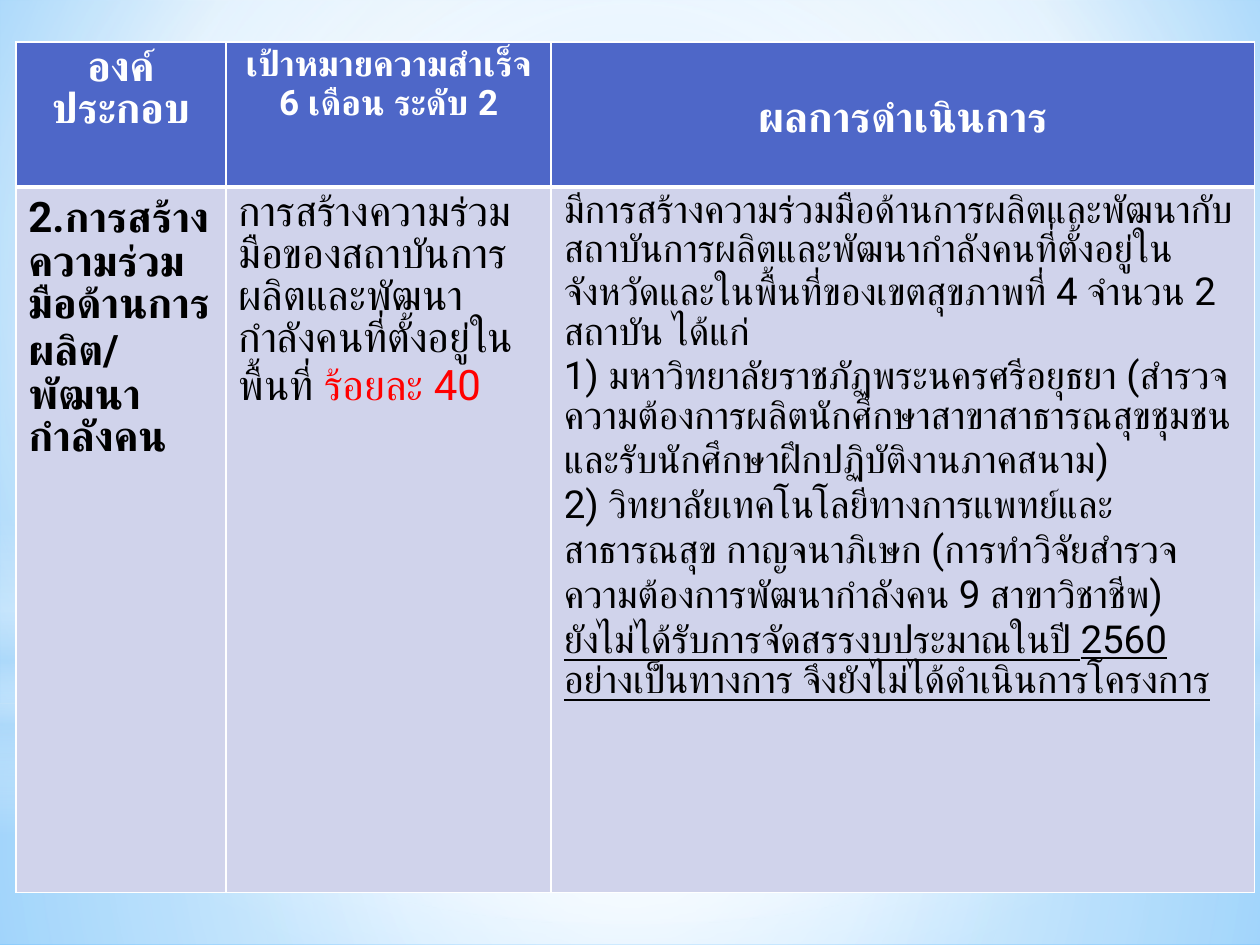
import dataclasses
import typing

import pptx
import pptx.dml.color
import pptx.enum.lang
import pptx.enum.shapes
import pptx.enum.text
import pptx.oxml
import pptx.oxml.ns
import pptx.util

Pt = pptx.util.Pt
RGB = pptx.dml.color.RGBColor
Shape = pptx.enum.shapes.MSO_SHAPE
Align = pptx.enum.text.PP_ALIGN
qn = pptx.oxml.ns.qn

WHITE = RGB(0xFF, 0xFF, 0xFF)
BLACK = RGB(0x00, 0x00, 0x00)
RED = RGB(0xFF, 0x00, 0x00)
INDIGO = RGB(0x4E, 0x67, 0xC8)
LILAC = RGB(0xD0, 0xD3, 0xEB)
SKY = RGB(0x9E, 0xD5, 0xFF)
AZURE = RGB(0x5B, 0xB9, 0xFF)
MIST = RGB(0xB4, 0xDC, 0xFA)

FONT = "Roboto"
WIDTH, HEIGHT = 720, 540
LEFT, TOP = 9, 24
COLS = (120.2, 185.8, 402)
ROWS = (82.8, 403.2)
CENTRE = (50, 50, 50, 50)


class Stop(typing.NamedTuple):
    pos: int
    color: RGB
    alpha: int = 100


@dataclasses.dataclass
class Glow:
    """A soft gradient band; without a focus it fades from top to bottom."""
    kind: Shape
    top: float
    height: float
    stops: list[Stop]
    focus: tuple | None = CENTRE


class Run(typing.NamedTuple):
    text: str
    size: int = 24
    color: RGB = BLACK
    bold: bool = False
    under: bool = False


@dataclasses.dataclass
class Cell:
    paras: list[list[Run]]
    fill: RGB = LILAC
    align: Align = Align.LEFT
    inset: float = 3.6
    base: float = 1


def head(*lines: str, size: int = 24, inset: float = 3.6) -> Cell:
    paras = [[Run(line, size, WHITE, True)] for line in lines]
    return Cell(paras, INDIGO, Align.CENTER, inset, 3)


GLOWS = [
    Glow(Shape.RECTANGLE, 402, 138,
         [Stop(0, WHITE, 91), Stop(37, WHITE, 76), Stop(100, MIST, 79)]),
    Glow(Shape.RECTANGLE, 0, 402,
         [Stop(0, WHITE, 89), Stop(48, WHITE, 62), Stop(100, MIST, 79)]),
    Glow(Shape.RECTANGLE, 296.6, 180,
         [Stop(0, WHITE, 0), Stop(29, WHITE, 30), Stop(45, MIST, 40),
          Stop(55, WHITE, 26), Stop(65, MIST, 60), Stop(100, WHITE, 0)], None),
    Glow(Shape.OVAL, 126, 402, [Stop(0, WHITE), Stop(56, WHITE, 0)]),
]

RESULTS = [
    Run("มีการสร้างความร่วมมือด้านการผลิตและพัฒนากับสถาบันการผลิตและพัฒนา"
        "กำลังคนที่ตั้งอยู่ในจังหวัดและในพื้นที่ของเขตสุขภาพที่ 4 จำนวน 2 "
        "สถาบัน ได้แก่", 22),
    Run("1) มหาวิทยาลัยราชภัฏพระนครศรีอยุธยา (สำรวจความต้องการผลิตนักศึกษา"
        "สาขาสาธารณสุขชุมชนและรับนักศึกษาฝึกปฏิบัติงานภาคสนาม)", 22),
    Run("2) วิทยาลัยเทคโนโลยีทางการแพทย์และสาธารณสุข กาญจนาภิเษก "
        "(การทำวิจัยสำรวจความต้องการพัฒนากำลังคน 9 สาขาวิชาชีพ)", 22),
    Run("ยังไม่ได้รับการจัดสรรงบประมาณในปี 2560 อย่างเป็นทางการ "
        "จึงยังไม่ได้ดำเนินการโครงการ", 22, under=True),
]

GRID = [
    [head("องค์", "ประกอบ"),
     head("เป้าหมายความสำเร็จ", "6 เดือน ระดับ 2", size=20),
     head("ผลการดำเนินการ", inset=32.8)],
    [Cell([[Run("2.การสร้างความร่วมมือด้านการผลิต/พัฒนากำลังคน", bold=True)]]),
     Cell([[Run("การสร้างความร่วมมือของสถาบันการผลิตและพัฒนากำลังคน"
                "ที่ตั้งอยู่ในพื้นที่ "),
            Run("ร้อยละ 40", color=RED)]]),
     Cell([[run] for run in RESULTS])],
]


def set_blend(owner, stops: list[Stop], focus: tuple | None) -> None:
    """Swap the solid fill inside owner for a gradient."""
    marks = "".join(
        f'<a:gs pos="{s.pos * 1000}"><a:srgbClr val="{s.color}">'
        f'<a:alpha val="{s.alpha * 1000}"/></a:srgbClr></a:gs>' for s in stops)
    if focus:
        sides = " ".join(f'{side}="{part * 1000}"'
                         for side, part in zip("ltrb", focus))
        way = f'<a:path path="circle"><a:fillToRect {sides}/></a:path>'
    else:
        way = '<a:lin ang="5400000" scaled="0"/>'
    blend = pptx.oxml.parse_xml(
        f'<a:gradFill {pptx.oxml.ns.nsdecls("a")} rotWithShape="1">'
        f'<a:gsLst>{marks}</a:gsLst>{way}</a:gradFill>')
    solid = next(owner.iter(qn("a:solidFill")))
    solid.getparent().replace(solid, blend)


def draw_glow(slide, glow: Glow) -> None:
    shape = slide.shapes.add_shape(
        glow.kind, 0, Pt(glow.top), Pt(WIDTH), Pt(glow.height))
    shape.shadow.inherit = False
    shape.line.fill.background()
    shape.fill.solid()
    set_blend(shape._element.spPr, glow.stops, glow.focus)


def draw_run(para, spec: Run) -> None:
    run = para.add_run()
    run.text = spec.text
    style = {"name": FONT, "size": Pt(spec.size), "bold": spec.bold,
             "underline": spec.under,
             "language_id": pptx.enum.lang.MSO_LANGUAGE_ID.THAI}
    for key, value in style.items():
        setattr(run.font, key, value)
    run.font.color.rgb = spec.color


def set_edges(cell, base: float) -> None:
    for spot, side in enumerate("LRTB"):
        width = Pt(base if side == "B" else 1)
        edge = pptx.oxml.parse_xml(
            f'<a:ln{side} {pptx.oxml.ns.nsdecls("a")} w="{width}"><a:solidFill>'
            f'<a:srgbClr val="{WHITE}"/></a:solidFill></a:ln{side}>')
        cell._tc.get_or_add_tcPr().insert(spot, edge)


def draw_cell(cell, spec: Cell) -> None:
    cell.fill.solid()
    cell.fill.fore_color.rgb = spec.fill
    cell.margin_top = Pt(spec.inset)
    set_edges(cell, spec.base)
    frame = cell.text_frame
    for spot, runs in enumerate(spec.paras):
        para = frame.add_paragraph() if spot else frame.paragraphs[0]
        para.alignment = spec.align
        for run in runs:
            draw_run(para, run)


def draw_table(slide) -> None:
    table = slide.shapes.add_table(
        len(ROWS), len(COLS), Pt(LEFT), Pt(TOP),
        Pt(sum(COLS)), Pt(sum(ROWS))).table
    table.horz_banding = False
    for col, width in zip(table.columns, COLS):
        col.width = Pt(width)
    for row, height, specs in zip(table.rows, ROWS, GRID):
        row.height = Pt(height)
        for cell, spec in zip(row.cells, specs):
            draw_cell(cell, spec)


def main() -> None:
    deck = pptx.Presentation()
    deck.slide_width, deck.slide_height = Pt(WIDTH), Pt(HEIGHT)
    slide = deck.slides.add_slide(deck.slide_layouts[6])
    slide.background.fill.solid()
    set_blend(slide._element.cSld.bg,
              [Stop(0, SKY), Stop(60, WHITE), Stop(100, AZURE)],
              (20, 10, 20, 60))
    for glow in GLOWS:
        draw_glow(slide, glow)
    draw_table(slide)
    deck.save("out.pptx")


if __name__ == "__main__":
    main()
